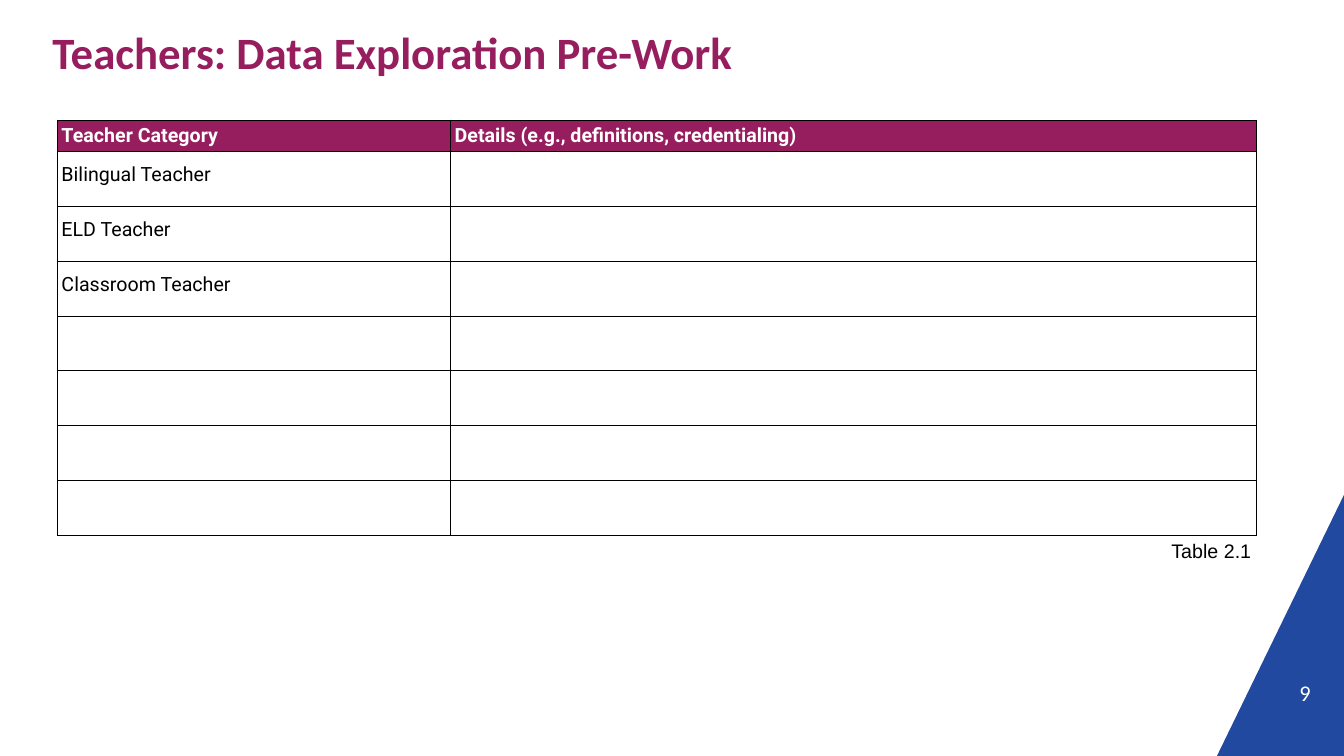
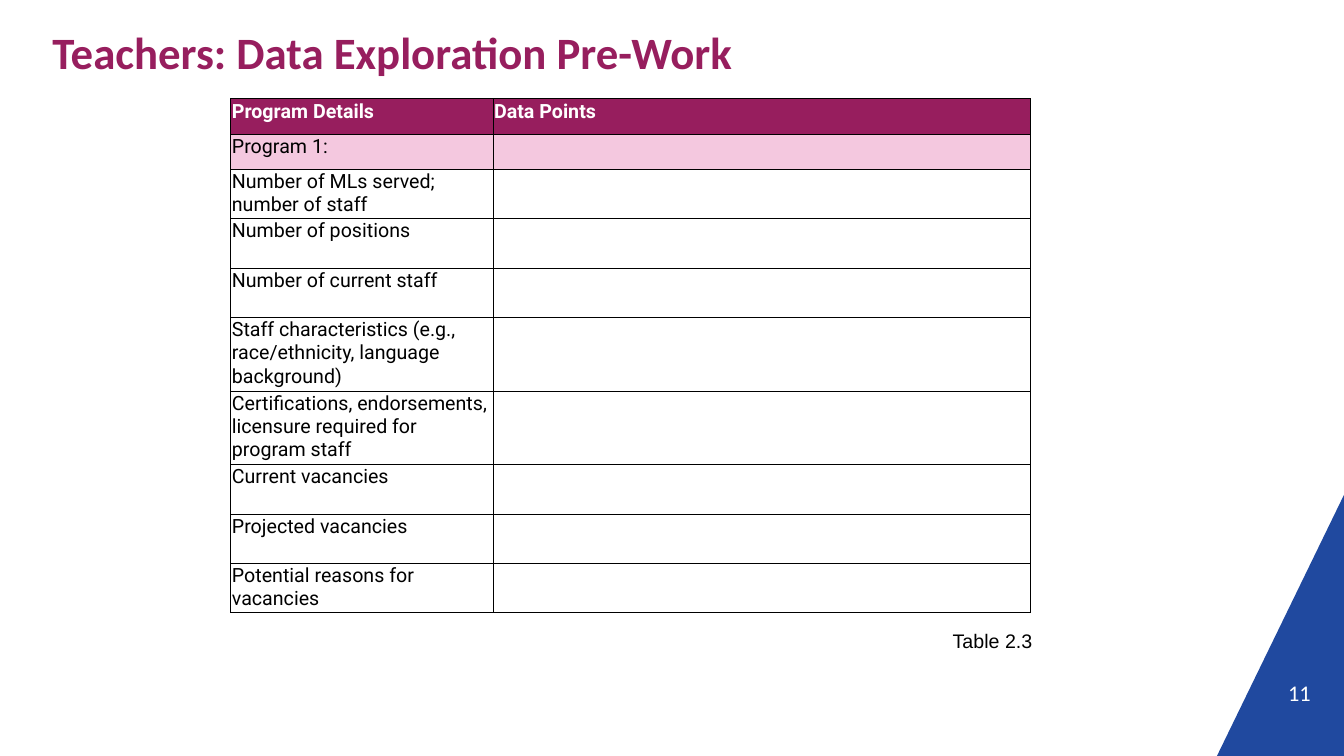
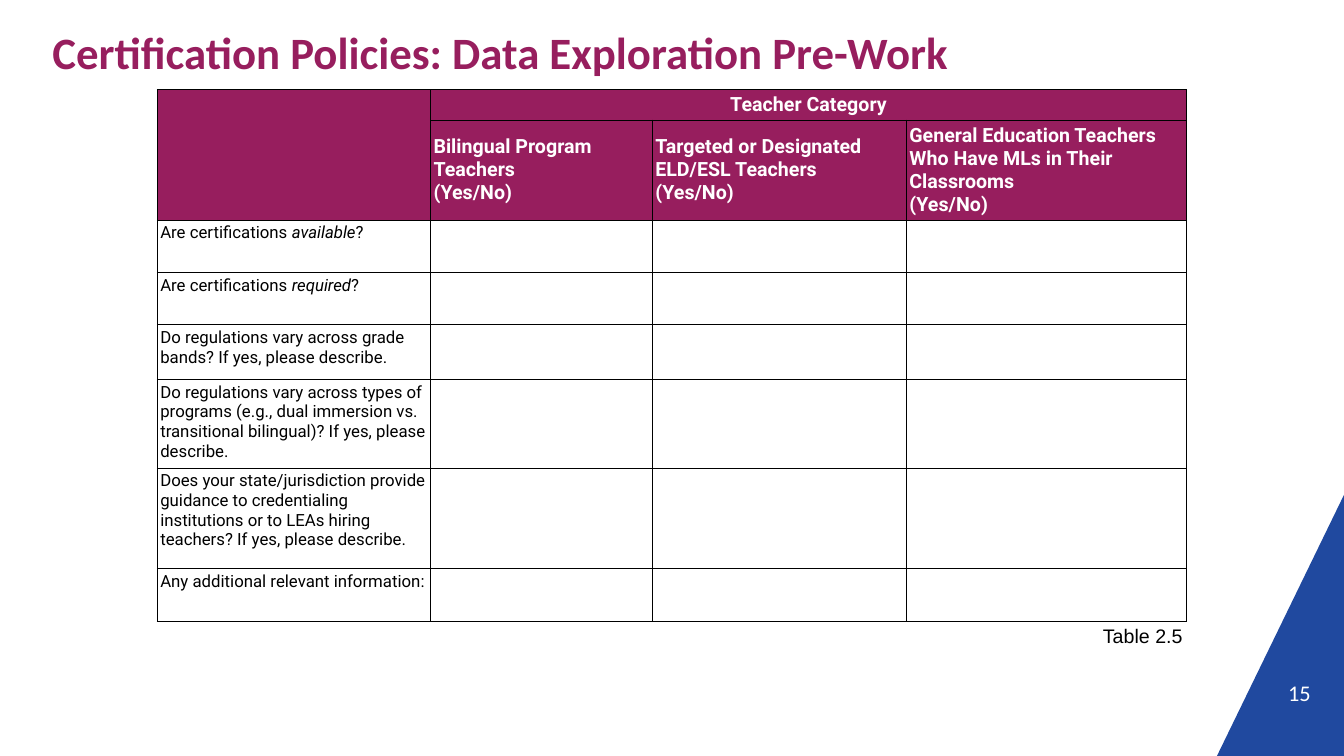
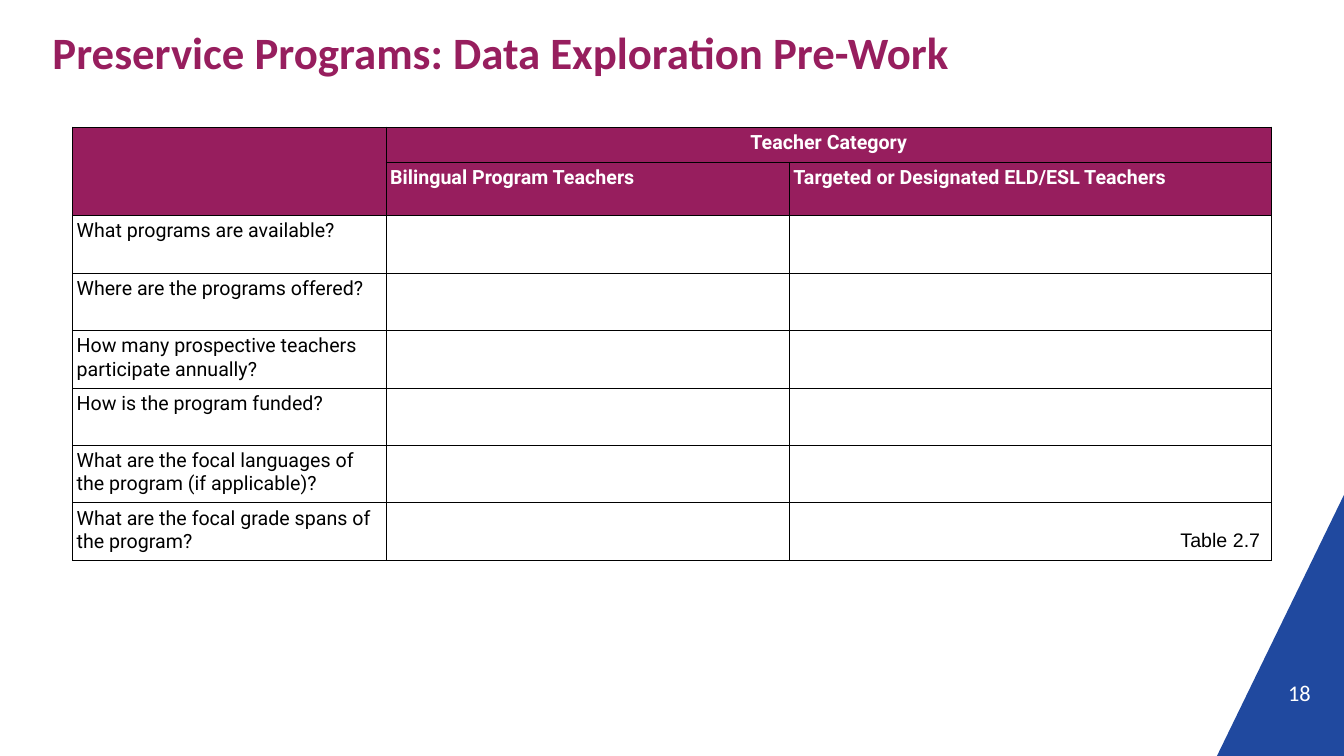
from dataclasses import dataclass

from lxml import etree
from pptx import Presentation
from pptx import util as u
from pptx.dml.color import RGBColor
from pptx.enum import text
from pptx.oxml import ns


@dataclass(frozen=True)
class Theme:
    plum: RGBColor = RGBColor.from_string("971E5E")
    pink: RGBColor = RGBColor.from_string("F4C8DF")
    blue: RGBColor = RGBColor.from_string("20499F")
    white: RGBColor = RGBColor.from_string("FFFFFF")
    black: RGBColor = RGBColor.from_string("000000")
    heading_font: str = "Calibri"
    table_font: str = "Roboto"
    caption_font: str = "Arial"
    title_size: float = 32
    number_size: float = 16
    body_size: float = 14
    small_size: float = 12
    border: float = 0.75
    space_after: float = 10.1


class Deck:
    def __init__(self, theme):
        self.theme = theme
        self.presentation = Presentation()
        self.presentation.slide_width = u.Inches(13.33)
        self.presentation.slide_height = u.Inches(7.5)
        self.slide = None

    def format_runs(self, paragraph, font, size, color, bold=False):
        for run in paragraph.runs:
            run.font.name = font
            run.font.size = u.Pt(size)
            run.font.color.rgb = color
            run.font.bold = bold

    def set_insets(self, target, inset):
        for side in ("left", "right", "top", "bottom"):
            setattr(target, f"margin_{side}", u.Inches(inset))

    def start_slide(self, title, number):
        layout = self.presentation.slide_layouts[5]
        self.slide = self.presentation.slides.add_slide(layout)
        self.corner()
        self.title(title)
        self.page_number(number)

    def corner(self):
        builder = self.slide.shapes.build_freeform(
            u.Inches(13.33), u.Inches(4.91))
        builder.add_line_segments(
            [(u.Inches(12.07), u.Inches(7.5)), (u.Inches(13.33), u.Inches(7.5))])
        shape = builder.convert_to_shape()
        shape.shadow.inherit = False
        shape.fill.solid()
        shape.fill.fore_color.rgb = self.theme.blue
        shape.line.fill.background()

    def title(self, words):
        shape = self.slide.shapes.title
        shape.left, shape.top = u.Inches(0.52), u.Inches(0.24)
        shape.width, shape.height = u.Inches(11.98), u.Inches(0.54)
        frame = shape.text_frame
        frame.text = words
        frame.auto_size = text.MSO_AUTO_SIZE.NONE
        frame.vertical_anchor = text.MSO_ANCHOR.MIDDLE
        self.set_insets(frame, 0)
        paragraph = frame.paragraphs[0]
        paragraph.alignment = text.PP_ALIGN.LEFT
        self.format_runs(paragraph, self.theme.heading_font,
                         self.theme.title_size, self.theme.plum, True)

    def text_box(self, words, left, top, width, height, font, size, color):
        box = self.slide.shapes.add_textbox(
            u.Inches(left), u.Inches(top), u.Inches(width), u.Inches(height))
        frame = box.text_frame
        frame.word_wrap = True
        frame.text = words
        self.format_runs(frame.paragraphs[0], font, size, color)
        return frame

    def page_number(self, number):
        frame = self.text_box(str(number), 12.01, 6.7, 0.99, 0.3,
                              self.theme.heading_font,
                              self.theme.number_size, self.theme.white)
        self.set_insets(frame, 0)
        frame.vertical_anchor = text.MSO_ANCHOR.BOTTOM
        frame.paragraphs[0].alignment = text.PP_ALIGN.RIGHT

    def caption(self, words, left, top):
        self.text_box(words, left, top, 1.39, 0.34, self.theme.caption_font,
                      self.theme.body_size, self.theme.black)

    def style_cell(self, cell, fill, inset):
        properties = cell._tc.get_or_add_tcPr()
        for side in ("lnL", "lnR", "lnT", "lnB"):
            line = etree.SubElement(properties, ns.qn(f"a:{side}"),
                                    w=str(u.Pt(self.theme.border)))
            solid = etree.SubElement(line, ns.qn("a:solidFill"))
            etree.SubElement(solid, ns.qn("a:srgbClr"),
                             val=str(self.theme.black))
        if fill is None:
            cell.fill.background()
        else:
            cell.fill.solid()
            cell.fill.fore_color.rgb = fill
        self.set_insets(cell, inset)

    def fill_cell(self, cell, words, size, color, bold):
        paragraph = cell.text_frame.paragraphs[0]
        if not words:
            etree.SubElement(paragraph._p, ns.qn("a:endParaRPr"),
                             sz=str(int(size * 100)))
            return
        plain, *pieces = words.split("*")
        paragraph.text = plain
        for index, piece in enumerate(pieces):
            run = paragraph.add_run()
            run.text = piece
            run.font.italic = index % 2 == 0
        paragraph.space_after = u.Pt(self.theme.space_after)
        self.format_runs(paragraph, self.theme.table_font, size, color, bold)

    def table(self, left, top, widths, heights, headers, labels, inset,
              body_size=None, middle_rows=(), line_spacing=None,
              shaded_rows=()):
        theme = self.theme
        rows = headers + [[label] for label in labels]
        frame = self.slide.shapes.add_table(
            len(rows), len(widths), u.Inches(left), u.Inches(top),
            u.Inches(sum(widths)), u.Inches(sum(heights)))
        table = frame.table
        table.first_row = table.horz_banding = False
        for column, width in zip(table.columns, widths):
            column.width = u.Inches(width)
        for row, height in zip(table.rows, heights):
            row.height = u.Inches(height)
        for row_index, row in enumerate(rows):
            header = row_index < len(headers)
            size = theme.body_size if header else body_size or theme.body_size
            color = theme.white if header else theme.black
            fill = theme.plum if header else None
            if row_index in shaded_rows:
                fill = theme.pink
            for column_index in range(len(widths)):
                words = row[column_index] if column_index < len(row) else ""
                cell = table.cell(row_index, column_index)
                self.style_cell(cell, fill, inset)
                self.fill_cell(cell, words, size, color, header)
                if row_index in middle_rows:
                    cell.vertical_anchor = text.MSO_ANCHOR.MIDDLE
                if words and line_spacing and not header:
                    cell.text_frame.paragraphs[0].line_spacing = u.Pt(line_spacing)
        if len(headers) == 2:
            table.cell(0, 0).merge(table.cell(1, 0))
            group = table.cell(0, 1)
            group.merge(table.cell(0, len(widths) - 1))
            group.text_frame.paragraphs[0].alignment = text.PP_ALIGN.CENTER


def main():
    theme = Theme()
    deck = Deck(theme)

    deck.start_slide("Teachers: Data Exploration Pre-Work", 9)
    deck.table(
        0.57, 1.19, [3.9, 7.99], [0.31] + [3.81 / 7] * 7,
        [["Teacher Category", "Details (e.g., definitions, credentialing)"]],
        ["Bilingual Teacher", "ELD Teacher", "Classroom Teacher"] + [""] * 4,
        0.04, middle_rows=(1, 2, 3), line_spacing=10.5)
    deck.caption("Table 2.1", 11.52, 5.3)

    deck.start_slide("Teachers: Data Exploration Pre-Work", 11)
    deck.table(
        2.29, 0.98, [2.6, 5.33],
        [0.35] * 2 + [0.49] * 3 + [0.73] * 2 + [0.49] * 3,
        [["Program Details", "Data Points"]],
        ["Program 1:",
         "Number of MLs served; number of staff",
         "Number of positions",
         "Number of current staff",
         "Staff characteristics (e.g., race/ethnicity, language background)",
         "Certifications, endorsements, licensure required for program staff",
         "Current vacancies",
         "Projected vacancies",
         "Potential reasons for vacancies"],
        0.01, shaded_rows=(1,))
    deck.caption("Table 2.3", 9.35, 6.19)

    deck.start_slide("Certification Policies: Data Exploration Pre-Work", 15)
    deck.table(
        1.56, 0.89, [2.71, 2.2, 2.52, 2.78],
        [0.3, 0.98, 0.52, 0.52, 0.54, 0.88, 1, 0.52],
        [["", "Teacher Category"],
         ["", "Bilingual Program Teachers\n(Yes/No)",
          "Targeted or Designated ELD/ESL Teachers\n(Yes/No)",
          "General Education Teachers Who Have MLs in Their Classrooms\n(Yes/No)"]],
        ["Are certifications *available*?",
         "Are certifications *required*?",
         "Do regulations vary across grade bands? If yes, please describe.",
         "Do regulations vary across types of programs (e.g., dual immersion "
         "vs. transitional bilingual)? If yes, please describe.",
         "Does your state/jurisdiction provide guidance to credentialing "
         "institutions or to LEAs hiring teachers? If yes, please describe.",
         "Any additional relevant information:"],
        0.03, body_size=theme.small_size, middle_rows=(1,))
    deck.caption("Table 2.5", 10.84, 6.14)

    deck.start_slide("Preservice Programs: Data Exploration Pre-Work", 18)
    deck.table(
        0.72, 1.26, [3.11, 4, 4.78], [0.35, 0.53] + [0.57] * 6,
        [["", "Teacher Category"],
         ["", "Bilingual Program Teachers",
          "Targeted or Designated ELD/ESL Teachers"]],
        ["What programs are available?",
         "Where are the programs offered?",
         "How many prospective teachers participate annually?",
         "How is the program funded?",
         "What are the focal languages of the program (if applicable)?",
         "What are the focal grade spans of the program?"],
        0.04)
    deck.caption("Table 2.7", 11.61, 5.19)

    deck.presentation.save("out.pptx")


if __name__ == "__main__":
    main()
